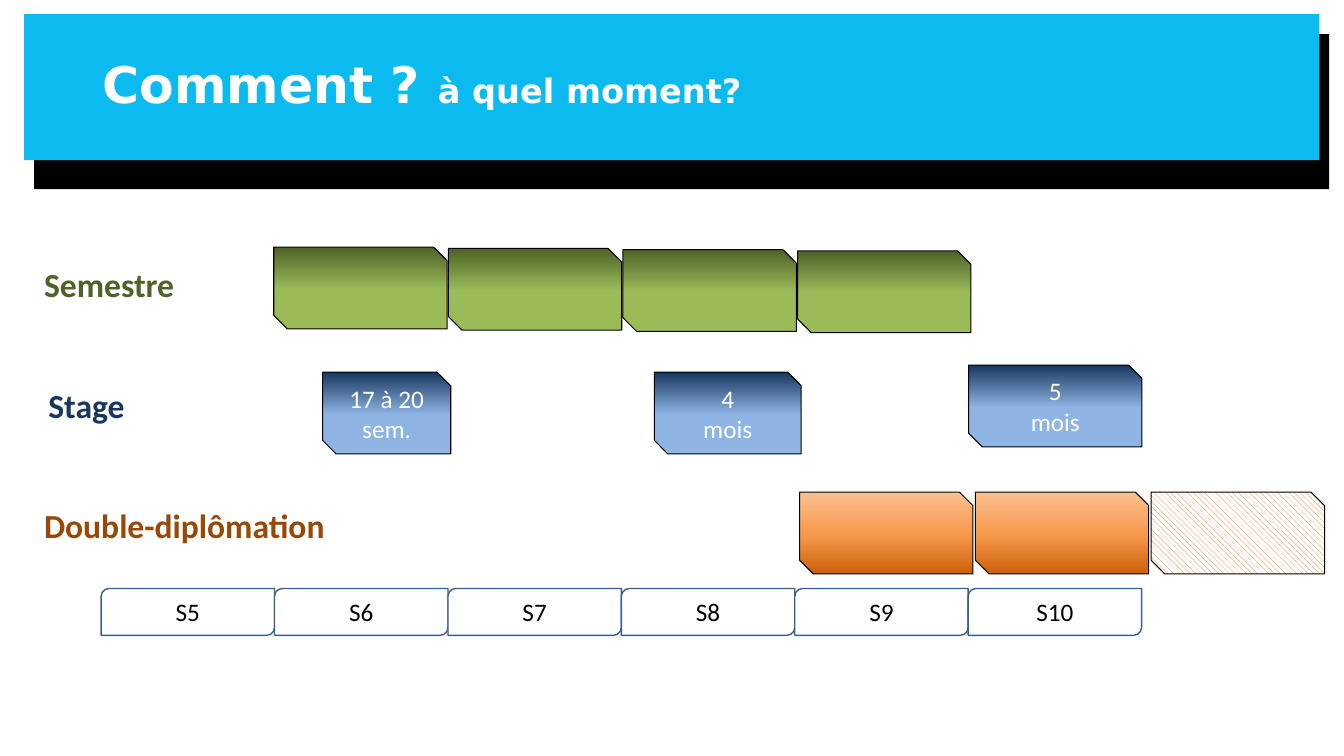
import copy

import pptx
import pptx.dml.color
import pptx.enum.dml
import pptx.enum.shapes
import pptx.enum.text
import pptx.oxml.ns
import pptx.util
from pptx.util import Cm

SHAPE = pptx.enum.shapes.MSO_SHAPE
ALIGN = pptx.enum.text.PP_ALIGN
ANCHOR = pptx.enum.text.MSO_ANCHOR

# Gradient colours, from bottom to top
GREEN = ("9BBB59", "9BBB59", "4F6228")
BLUE = ("8EB4E3", "8EB4E3", "17375E")
ORANGE = ("CC6109", "F7994C", "FAC090")

BLOCK_WIDTH = 4.37
BLOCK_HEIGHT = 2.06


def colour(value):
    return pptx.dml.color.RGBColor.from_string(value)


def write(paragraph, text, size=18, font="Calibri", color="000000", bold=False):
    run = paragraph.add_run()
    run.text = text
    run.font.size = pptx.util.Pt(size)
    run.font.name = font
    run.font.bold = bold
    run.font.color.rgb = colour(color)


def add_box(shapes, preset, left, top, width, height, fill=None, line=None, weight=0.75):
    box = shapes.add_shape(preset, Cm(left), Cm(top), Cm(width), Cm(height))
    box.shadow.inherit = False
    if fill:
        box.fill.solid()
        box.fill.fore_color.rgb = colour(fill)
    if line:
        box.line.color.rgb = colour(line)
        box.line.width = pptx.util.Pt(weight)
    else:
        box.line.fill.background()
    return box


def add_caption(box, text, color):
    frame = box.text_frame
    frame.vertical_anchor = ANCHOR.MIDDLE
    for index, words in enumerate(text.split("\n")):
        paragraph = frame.add_paragraph() if index else frame.paragraphs[0]
        paragraph.alignment = ALIGN.CENTER
        write(paragraph, words, color=color)


def add_period(slide, left, top, width=BLOCK_WIDTH):
    return add_box(slide.shapes, SHAPE.SNIP_2_DIAG_RECTANGLE, left, top,
                   width, BLOCK_HEIGHT, line="000000")


def shade(box, colours):
    box.fill.gradient()
    box.fill.gradient_angle = 90
    # A new gradient has two stops: add the middle one
    first_stop = box._element.spPr.find(".//" + pptx.oxml.ns.qn("a:gs"))
    first_stop.addnext(copy.deepcopy(first_stop))
    for stop, position, value in zip(box.fill.gradient_stops, (0, 0.48, 1), colours):
        stop.position = position
        stop.color.rgb = colour(value)


def add_text_area(slide, left, top, width, height):
    area = slide.shapes.add_textbox(Cm(left), Cm(top), Cm(width), Cm(height))
    area.text_frame.word_wrap = True
    return area.text_frame


def add_heading(slide):
    add_box(slide.shapes, SHAPE.RECTANGLE, 0.86, 0.86, 32.64, 3.91, fill="000000")
    add_box(slide.shapes, SHAPE.RECTANGLE, 0.61, 0.36, 32.64, 3.68, fill="0BBBEF")
    frame = add_text_area(slide, 2.34, 0.36, 29.21, 3.68)
    frame.vertical_anchor = ANCHOR.MIDDLE
    title = frame.paragraphs[0]
    title.line_spacing = 0.9
    for text, size in (("Comment ? ", 36), ("à quel moment?", 24)):
        write(title, text, size=size, font="DejaVu Sans", color="FFFFFF", bold=True)


def add_timeline(slide):
    timeline = slide.shapes.add_group_shape()
    for index in range(6):
        semester = add_box(timeline.shapes, SHAPE.ROUND_2_DIAG_RECTANGLE,
                           2.55 + index * BLOCK_WIDTH, 14.83, BLOCK_WIDTH, 1.18,
                           fill="FFFFFF", line="3A5F8C", weight=1)
        add_caption(semester, f"S{index + 5}", "000000")


def main():
    deck = pptx.Presentation()
    deck.slide_width, deck.slide_height = Cm(33.87), Cm(19.05)
    slide = deck.slides.add_slide(deck.slide_layouts[6])

    add_heading(slide)
    add_timeline(slide)

    # Internships
    for text, left, top, width in (("17 à 20\nsem.", 8.13, 9.38, 3.23),
                                   ("4\nmois", 16.49, 9.38, 3.7),
                                   ("5\nmois", 24.41, 9.2, BLOCK_WIDTH)):
        internship = add_period(slide, left, top, width)
        shade(internship, BLUE)
        add_caption(internship, text, "FFFFFF")

    # Semesters abroad, stepping slightly down
    for index in range(4):
        shade(add_period(slide, 6.9 + index * 4.4, 6.23 + index * 0.03), GREEN)

    # Double degree, with an optional last block
    for index in range(3):
        degree = add_period(slide, 20.15 + (index * 4.43), 12.4)
        if index < 2:
            shade(degree, ORANGE)
        else:
            degree.fill.patterned()
            degree.fill.pattern = pptx.enum.dml.MSO_PATTERN.WIDE_DOWNWARD_DIAGONAL
            degree.fill.fore_color.rgb = colour("E46C0A")
            degree.fill.back_color.rgb = colour("FFFFFF")

    # Row labels
    for text, left, top, width, color in (("Stage", 0.97, 9.58, 5.94, "17375E"),
                                          ("Semestre", 0.86, 6.53, 5.94, "4F6228"),
                                          ("Double-diplômation", 0.86, 12.6, 8.59, "984807")):
        label = add_text_area(slide, left, top, width, 1.27)
        write(label.paragraphs[0], text, size=24, color=color, bold=True)

    deck.save("out.pptx")


if __name__ == "__main__":
    main()
